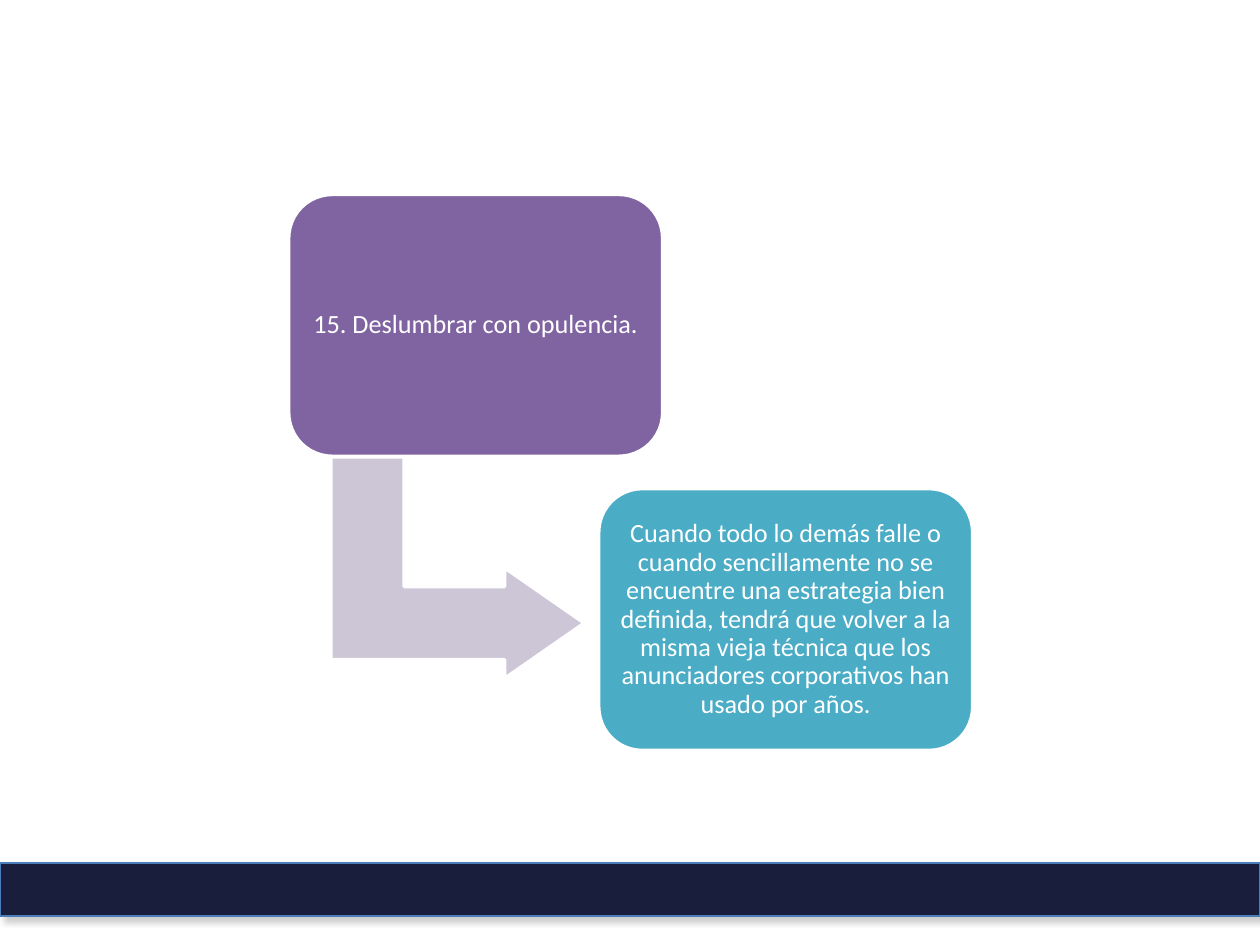
from lxml import etree
from pptx import Presentation
from pptx.dml.color import RGBColor
from pptx.enum.shapes import MSO_SHAPE
from pptx.enum.text import MSO_ANCHOR, PP_ALIGN
from pptx.oxml.ns import qn
from pptx.util import Cm, Pt

RECT = MSO_SHAPE.RECTANGLE
ROUNDED = MSO_SHAPE.ROUNDED_RECTANGLE
BENT_ARROW = MSO_SHAPE.BENT_UP_ARROW
MIDDLE = MSO_ANCHOR.MIDDLE
CENTER = PP_ALIGN.CENTER

COLORS = {
    "navy": "191E3C",
    "bar_line": "4A7EBB",
    "shadow": "808080",
    "lilac": "CDC6D7",
    "purple": "8064A2",
    "teal": "4BACC6",
    "white": "FFFFFF",
}


def add_block(kind, left, top, width, height, fill, line, line_width):
    block = slide.shapes.add_shape(kind, Cm(left), Cm(top), Cm(width), Cm(height))
    block.shadow.inherit = False
    block.fill.solid()
    block.fill.fore_color.rgb = RGBColor.from_string(COLORS[fill])
    block.line.color.rgb = RGBColor.from_string(COLORS[line])
    block.line.width = Pt(line_width)
    return block


prs = Presentation()
prs.slide_width, prs.slide_height = Cm(25.4), Cm(19.05)
slide = prs.slides.add_slide(prs.slide_layouts[6])

# Footer bar with a soft shadow
footer = add_block(RECT, 0, 17.4, 25.4, 1.07, "navy", "bar_line", 0.75)
effects = footer._element.spPr.find(qn("a:effectLst"))
shadow = etree.SubElement(effects, qn("a:outerShdw"), blurRad=str(Pt(4)),
                          dist=str(Pt(3)), dir=str(45 * 60000), rotWithShape="0")
shade = etree.SubElement(shadow, qn("a:srgbClr"), val=COLORS["shadow"])
etree.SubElement(shade, qn("a:alpha"), val="40000")

# Arrow from the strategy to its explanation
arrow = add_block(BENT_ARROW, 6.99, 8.89, 4.47, 5.11, "lilac", "white", 2)
arrow.rotation = 90
for index, ratio in enumerate((0.33, 0.25, 0.36)):
    arrow.adjustments[index] = ratio

# Steps, descending to the right
STEPS = [
    (5.82, 3.92, "purple", "15. Deslumbrar con opulencia."),
    (12.07, 9.85, "teal",
     "Cuando todo lo demás falle o cuando sencillamente no se encuentre una "
     "estrategia bien definida, tendrá que volver a la misma vieja técnica que "
     "los anunciadores corporativos han usado por años."),
]
for left, top, fill, wording in STEPS:
    step = add_block(ROUNDED, left, top, 7.54, 5.28, fill, "white", 2)
    frame = step.text_frame
    frame.word_wrap = True
    frame.vertical_anchor = MIDDLE
    frame.margin_left = frame.margin_right = Cm(0.15)
    frame.margin_top = frame.margin_bottom = Cm(0.15)
    paragraph = frame.paragraphs[0]
    paragraph.alignment = CENTER
    paragraph.line_spacing = 0.9
    run = paragraph.add_run()
    run.text = wording
    run.font.name = "Calibri"
    run.font.size = Pt(15)
    run.font.color.rgb = RGBColor.from_string(COLORS["white"])

prs.save("out.pptx")
